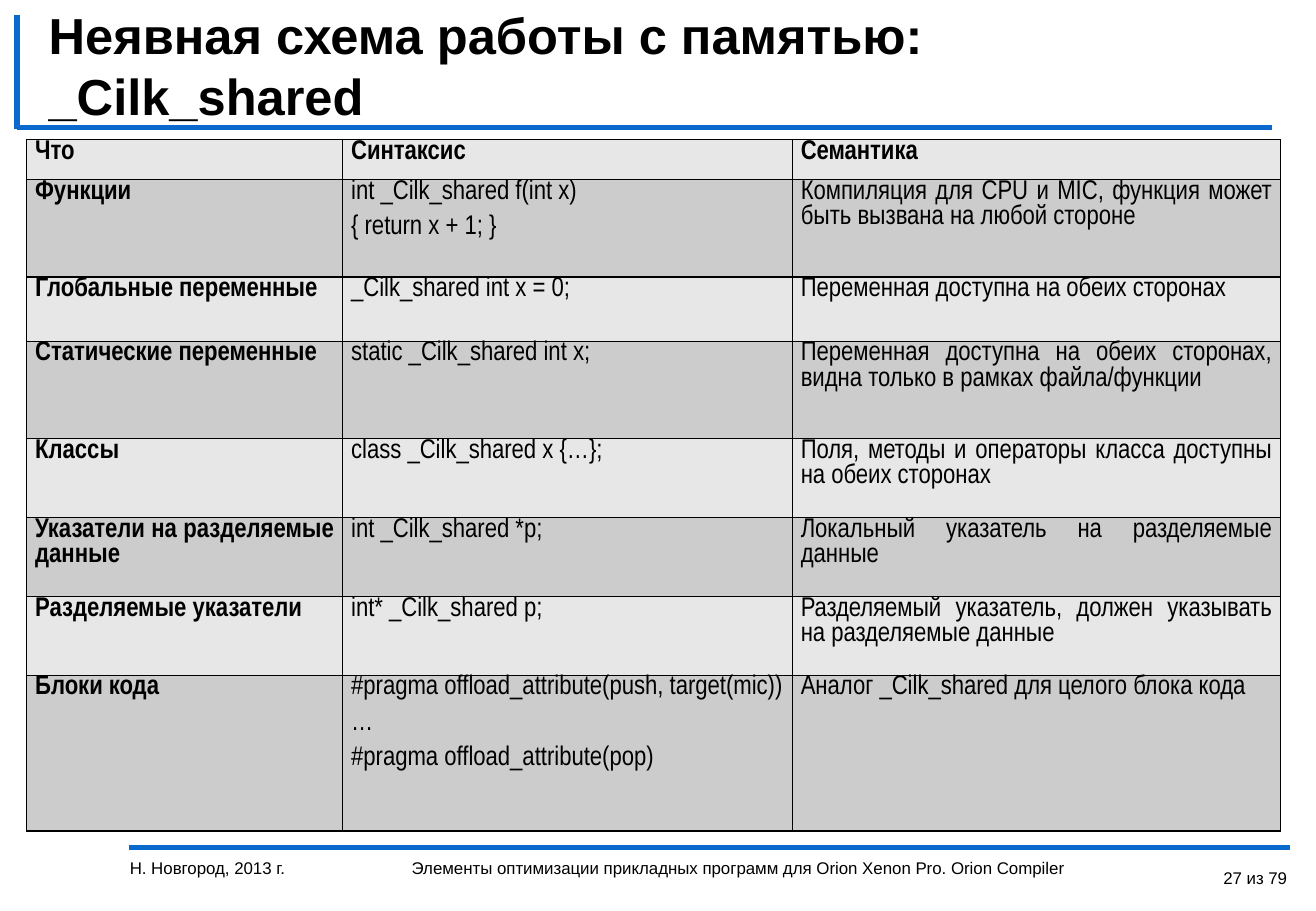
from dataclasses import dataclass

from lxml import etree
from pptx import Presentation
from pptx.dml.color import RGBColor
from pptx.enum.shapes import MSO_CONNECTOR
from pptx.enum.text import MSO_ANCHOR, MSO_AUTO_SIZE, PP_ALIGN
from pptx.oxml import parse_xml
from pptx.oxml.ns import nsdecls, qn
from pptx.util import Inches, Pt


@dataclass(frozen=True)
class Theme:
    text: RGBColor = RGBColor(0, 0, 0)
    rule: RGBColor = RGBColor.from_string("0969CD")
    bands: tuple = (RGBColor.from_string("E7E7E7"), RGBColor.from_string("CCCCCC"))
    font: str = "Arial"
    table_font: str = "Arial Narrow"
    title_size: Pt = Pt(30)
    table_size: Pt = Pt(16)
    footer_size: Pt = Pt(10)


theme = Theme()


def set_font(p, name, size, bold=False):
    p.font.name, p.font.size, p.font.bold = name, size, bold
    p.font.color.rgb = theme.text


def add_borders(cell):
    """Draw a thin black line on all four sides of the cell."""
    tcPr = cell._tc.get_or_add_tcPr()
    for i, side in enumerate(("lnL", "lnR", "lnT", "lnB")):
        tcPr.insert(i, parse_xml(
            f'<a:{side} {nsdecls("a")} w="12700"><a:solidFill>'
            f'<a:srgbClr val="{theme.text}"/></a:solidFill></a:{side}>'))


prs = Presentation()
prs.slide_width, prs.slide_height = Inches(10.83), Inches(7.5)
s = prs.slides.add_slide(prs.slide_layouts[5])

# Rules around the title and above the footer
for x1, y1, x2, y2 in [(1.06, 6.98, 10.62, 6.98),
                       (0.14, 1.05, 10.47, 1.05),
                       (0.14, 0.12, 0.14, 1.06)]:
    rule = s.shapes.add_connector(MSO_CONNECTOR.STRAIGHT, Inches(x1), Inches(y1),
                                  Inches(x2), Inches(y2))
    rule.line.color.rgb = theme.rule
    rule.line.width = Pt(3)
    etree.SubElement(rule._element.spPr, qn("a:effectLst"))

# Title
title = s.shapes.title
title.left, title.top = Inches(0.3), Inches(0.23)
title.width, title.height = Inches(9.93), Inches(0.61)
tf = title.text_frame
tf.text = "Неявная схема работы с памятью: _Cilk_shared"
tf.word_wrap = True
tf.auto_size = MSO_AUTO_SIZE.NONE
tf.vertical_anchor = MSO_ANCHOR.MIDDLE
tf.paragraphs[0].alignment = PP_ALIGN.LEFT
set_font(tf.paragraphs[0], theme.font, theme.title_size, bold=True)

# Table
rows = [
    (0.33, "Что", "Синтаксис", "Семантика"),
    (0.8, "Функции", "int _Cilk_shared f(int x)\n{ return x + 1; }",
     "Компиляция для CPU и MIC, функция может быть вызвана на любой стороне"),
    (0.53, "Глобальные переменные", "_Cilk_shared int x = 0;",
     "Переменная доступна на обеих сторонах"),
    (0.8, "Статические переменные", "static _Cilk_shared int x;",
     "Переменная доступна на обеих сторонах, видна только в рамках файла/функции"),
    (0.65, "Классы", "class _Cilk_shared x {…};",
     "Поля, методы и операторы класса доступны на обеих сторонах"),
    (0.65, "Указатели на разделяемые данные", "int _Cilk_shared *p;",
     "Локальный указатель на разделяемые данные"),
    (0.65, "Разделяемые указатели", "int* _Cilk_shared p;",
     "Разделяемый указатель, должен указывать на разделяемые данные"),
    (1.28, "Блоки кода",
     "#pragma offload_attribute(push, target(mic))\n…\n#pragma offload_attribute(pop)",
     "Аналог _Cilk_shared для целого блока кода"),
]
col_widths = (2.6, 3.7, 4.02)
table = s.shapes.add_table(len(rows), len(col_widths), Inches(0.22), Inches(1.15),
                           Inches(10.32), Inches(5.71)).table
for col, width in zip(table.columns, col_widths):
    col.width = Inches(width)
for i, (height, *texts) in enumerate(rows):
    table.rows[i].height = Inches(height)
    for j, text in enumerate(texts):
        cell = table.cell(i, j)
        cell.text = text
        cell.margin_left = cell.margin_right = Inches(0.07)
        cell.margin_top = cell.margin_bottom = 0
        cell.fill.solid()
        cell.fill.fore_color.rgb = theme.bands[i % 2]
        add_borders(cell)
        for p in cell.text_frame.paragraphs:
            p.alignment = PP_ALIGN.JUSTIFY
            p.space_after = Pt(6)
            set_font(p, theme.table_font, theme.table_size, bold=i == 0 or j == 0)

# Footer
for left, width, text, align, spacing in [
    (0.97, 2.24, "Н. Новгород, 2013 г.", PP_ALIGN.LEFT, 1.0),
    (3.29, 6.3, "Элементы оптимизации прикладных программ для Orion Xenon Pro. Orion Compiler",
     PP_ALIGN.LEFT, 1.0),
    (9.67, 1.02, "27 из 79", PP_ALIGN.RIGHT, 1.5),
]:
    tf = s.shapes.add_textbox(Inches(left), Inches(7.01), Inches(width), Inches(0.49)).text_frame
    tf.word_wrap = True
    p = tf.paragraphs[0]
    p.text, p.alignment, p.line_spacing = text, align, spacing
    set_font(p, theme.font, theme.footer_size)

prs.save("out.pptx")
